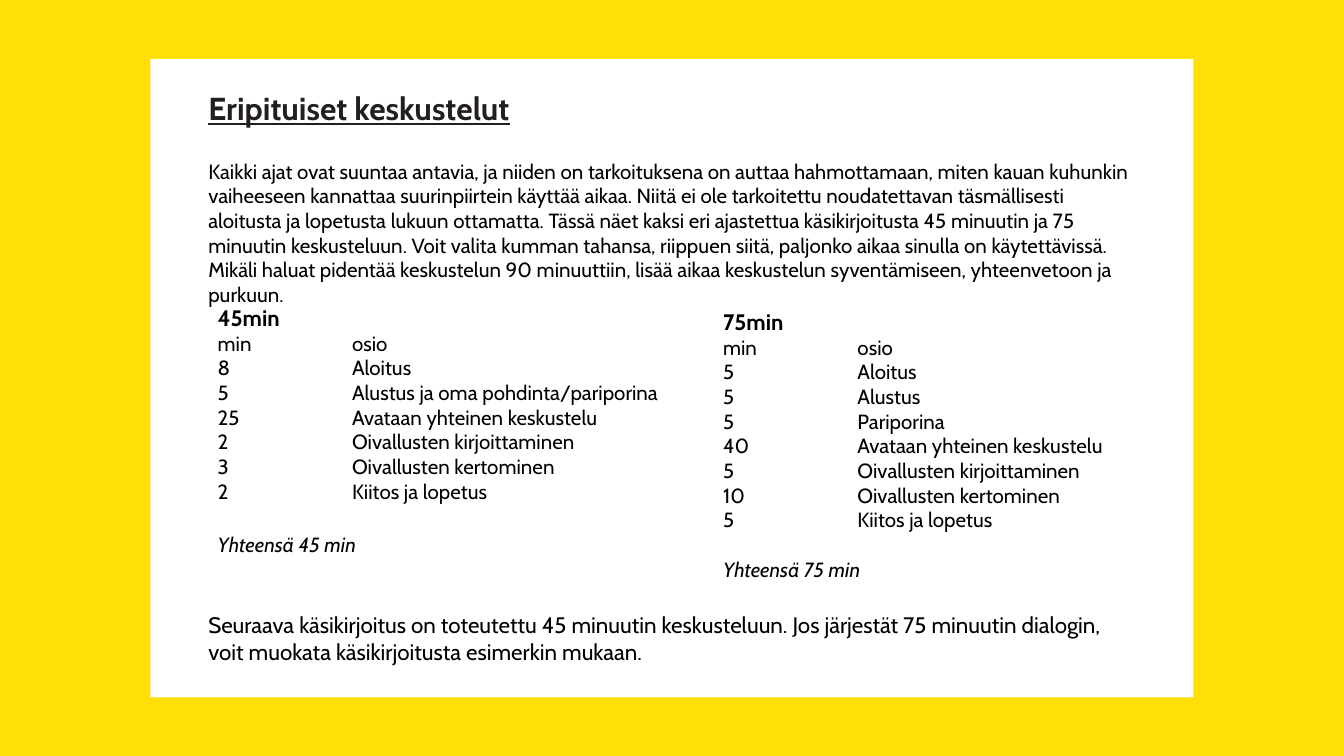
import pptx
import pptx.util
import pptx.dml.color
import pptx.enum.shapes
import pptx.enum.text
import pptx.oxml.ns
import lxml.etree

Inches = pptx.util.Inches
Pt = pptx.util.Pt

WIDTH = 10
HEIGHT = WIDTH * 9 / 16
FONT = "Cabin"
COLORS = {"yellow": "FFE006", "white": "FFFFFF", "title": "231F20", "text": "000000"}

INTRO = (
    "Kaikki ajat ovat suuntaa antavia, ja niiden on tarkoituksena on auttaa "
    "hahmottamaan, miten kauan kuhunkin vaiheeseen kannattaa suurinpiirtein "
    "käyttää aikaa. Niitä ei ole tarkoitettu noudatettavan täsmällisesti "
    "aloitusta ja lopetusta lukuun ottamatta. Tässä näet kaksi eri ajastettua "
    "käsikirjoitusta 45 minuutin ja 75 minuutin keskusteluun. Voit valita kumman "
    "tahansa, riippuen siitä, paljonko aikaa sinulla on käytettävissä. Mikäli "
    "haluat pidentää keskustelun 90 minuuttiin, lisää aikaa keskustelun "
    "syventämiseen, yhteenvetoon ja purkuun."
)
CLOSING = (
    "Seuraava käsikirjoitus on toteutettu 45 minuutin keskusteluun. Jos järjestät "
    "75 minuutin dialogin, voit muokata käsikirjoitusta esimerkin mukaan."
)
SHORT = [
    (8, "Aloitus"),
    (5, "Alustus ja oma pohdinta/pariporina"),
    (25, "Avataan yhteinen keskustelu"),
    (2, "Oivallusten kirjoittaminen"),
    (3, "Oivallusten kertominen"),
    (2, "Kiitos ja lopetus"),
]
LONG = [
    (5, "Aloitus"),
    (5, "Alustus"),
    (5, "Pariporina"),
    (40, "Avataan yhteinen keskustelu"),
    (5, "Oivallusten kirjoittaminen"),
    (10, "Oivallusten kertominen"),
    (5, "Kiitos ja lopetus"),
]


def rgb(name):
    return pptx.dml.color.RGBColor.from_string(COLORS[name])


def add_panel(slide, index, box, color):
    """Draw a plain rectangle behind the text, at the given depth."""
    kind = pptx.enum.shapes.MSO_SHAPE.RECTANGLE
    panel = slide.shapes.add_shape(kind, *map(Inches, box))
    panel.shadow.inherit = False
    panel.fill.solid()
    panel.fill.fore_color.rgb = rgb(color)
    panel.line.fill.background()
    tree = panel.element.getparent()
    tree.insert(2 + index, panel.element)


def style(para, size, color="text", bold=False, italic=False, under=False):
    para.alignment = pptx.enum.text.PP_ALIGN.LEFT
    para.space_before = para.space_after = Pt(0)
    for run in para.runs:
        font = run.font
        font.name, font.size = FONT, Pt(size)
        font.bold, font.italic, font.underline = bold, italic, under
        font.color.rgb = rgb(color)


def fill_text(shape, box, text, size, **look):
    """Place a text shape and give all its paragraphs one look."""
    shape.left, shape.top, shape.width, shape.height = map(Inches, box)
    frame = shape.text_frame
    frame.word_wrap = True
    frame.auto_size = pptx.enum.text.MSO_AUTO_SIZE.NONE
    frame.vertical_anchor = pptx.enum.text.MSO_ANCHOR.TOP
    frame.margin_left = frame.margin_right = Inches(0.16)
    frame.margin_top = frame.margin_bottom = Inches(0.08)
    frame.text = text
    for para in frame.paragraphs:
        style(para, size, **look)
    return frame.paragraphs


def set_tab(para):
    """Drop the bullet and space the tab stops one inch apart."""
    props = para._p.get_or_add_pPr()
    props.set("marL", "0")
    props.set("indent", "0")
    props.set("defTabSz", str(Inches(1)))
    lxml.etree.SubElement(props, pptx.oxml.ns.qn("a:buNone"))


def fill_plan(shape, box, steps, gap):
    """Write a timed list with its heading and its total."""
    total = sum(time for time, _ in steps)
    rows = [f"{total}min", "min\tosio"]
    rows += [f"{time}\t{part}" for time, part in steps]
    rows.append(f"Yhteensä {total} min")
    paras = fill_text(shape, box, "\n".join(rows), 11)
    style(paras[0], 12, bold=True)
    style(paras[-1], 11, italic=True)
    paras[-1].space_before = Pt(gap)
    for para in paras:
        set_tab(para)


def add_prose(slide, box, text, size):
    shape = slide.shapes.add_textbox(*map(Inches, box))
    fill_text(shape, box, text, size)


def main():
    deck = pptx.Presentation()
    deck.slide_width, deck.slide_height = Inches(WIDTH), Inches(HEIGHT)
    slide = deck.slides.add_slide(deck.slide_layouts[3])
    title, left, right = slide.placeholders

    # Yellow frame and white sheet
    add_panel(slide, 0, (0, 0, WIDTH, HEIGHT), "yellow")
    add_panel(slide, 1, (1.12, 0.44, 7.76, 4.75), "white")

    # Title and introduction
    head = fill_text(title, (1.39, 0.54, 7.23, 0.5), "Eripituiset keskustelut", 17,
                     color="title", bold=True, under=True)
    head[0].line_spacing = 1.15
    add_prose(slide, (1.39, 1.1, 7.23, 1.25), INTRO, 11)

    # The two timed plans
    fill_plan(left, (1.46, 2.18, 3.7, 2.2), SHORT, 15.5)
    fill_plan(right, (5.22, 2.21, 3.24, 2.3), LONG, 13.2)

    # Closing note
    add_prose(slide, (1.39, 4.47, 7.23, 0.6), CLOSING, 12)

    deck.save("out.pptx")


if __name__ == "__main__":
    main()
